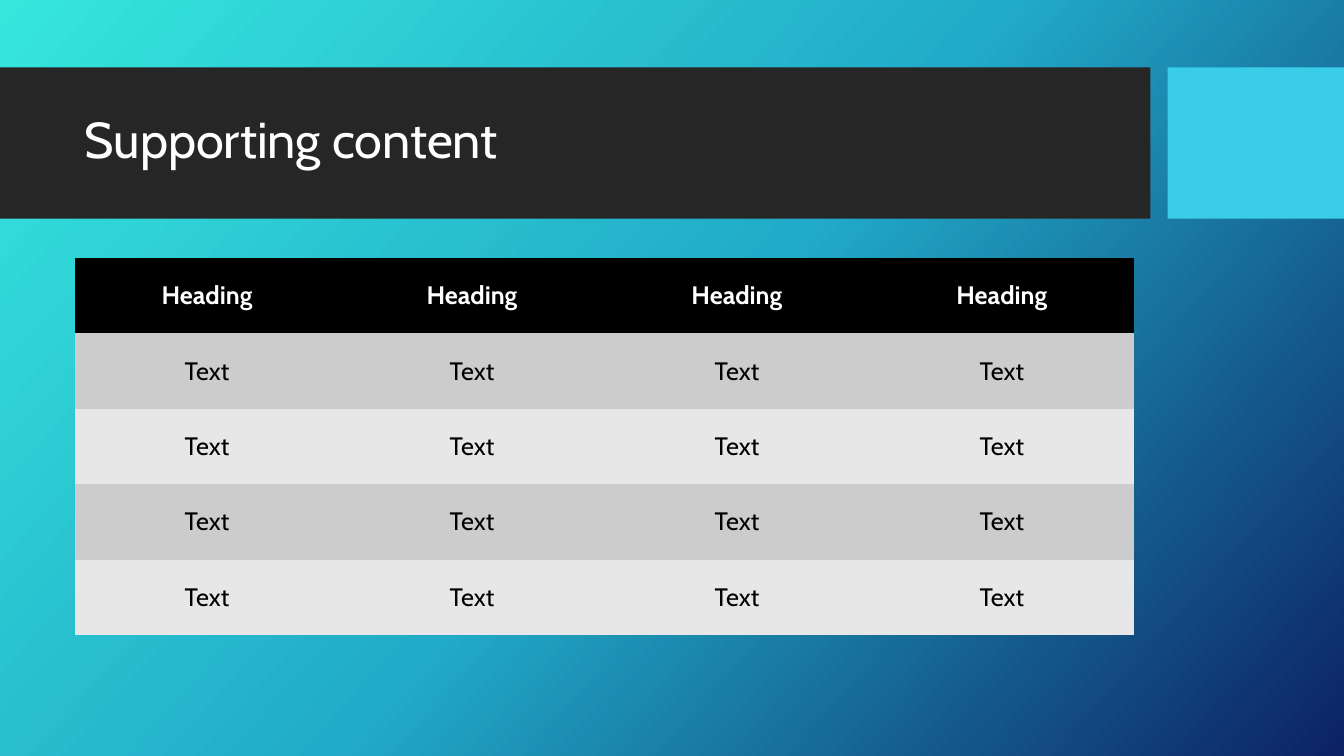
from copy import deepcopy
from dataclasses import dataclass

from pptx import Presentation
from pptx import util as u
from pptx.dml.color import RGBColor
from pptx.enum import shapes, text
from pptx.oxml.ns import qn
from pptx.slide import Slide
from pptx.text.text import TextFrame

SLIDE_WIDTH = u.Inches(13.33)
SLIDE_HEIGHT = u.Inches(7.5)
FONT = "Cabin"
NO_GRID_STYLE = "{2D5ABB26-0587-4C30-8999-92F81FD0307C}"

WHITE = RGBColor(0xFF, 0xFF, 0xFF)
BLACK = RGBColor(0x00, 0x00, 0x00)
CHARCOAL = RGBColor(0x26, 0x26, 0x26)
CYAN = RGBColor(0x39, 0xCD, 0xE7)
ROW_GREY = RGBColor(0xCC, 0xCC, 0xCC)
ROW_LIGHT = RGBColor(0xE7, 0xE7, 0xE7)
BACKDROP = (
    RGBColor(0x36, 0xE6, 0xDD),
    RGBColor(0x21, 0xAB, 0xC8),
    RGBColor(0x0C, 0x22, 0x63),
)
BACKDROP_ANGLE = 42


@dataclass(frozen=True)
class Area:
    """Place and size in percent of the slide."""

    left: float
    top: float
    width: float
    height: float

    def box(self) -> tuple[int, int, int, int]:
        return (
            round(SLIDE_WIDTH * self.left / 100),
            round(SLIDE_HEIGHT * self.top / 100),
            round(SLIDE_WIDTH * self.width / 100),
            round(SLIDE_HEIGHT * self.height / 100),
        )


@dataclass(frozen=True)
class Band:
    area: Area
    color: RGBColor


@dataclass(frozen=True)
class Row:
    label: str
    fill: RGBColor
    color: RGBColor
    bold: bool = False


BANDS = (
    Band(Area(0, 8.93, 85.6, 20), CHARCOAL),
    Band(Area(86.87, 8.93, 13.13, 20), CYAN),
)
TITLE_AREA = Area(5.55, 10.93, 78.85, 15.73)
TABLE_AREA = Area(5.55, 34.13, 78.85, 49.87)
COLUMNS = 4
ROWS = (
    Row("Heading", BLACK, WHITE, True),
    *(Row("Text", fill, BLACK) for fill in (ROW_GREY, ROW_LIGHT) * 2),
)


def write(frame: TextFrame, words: str, size: int, color: RGBColor, bold: bool = False) -> None:
    run = frame.paragraphs[0].add_run()
    run.text = words
    run.font.name = FONT
    run.font.size = u.Pt(size)
    run.font.bold = bold
    run.font.color.rgb = color


def paint_backdrop(slide: Slide) -> None:
    fill = slide.background.fill
    fill.gradient()
    fill.gradient_angle = 360 - BACKDROP_ANGLE
    stop_list = next(slide.element.iter(qn("a:gsLst")))
    stop_list.append(deepcopy(stop_list[-1]))
    for index, (stop, color) in enumerate(zip(fill.gradient_stops, BACKDROP)):
        stop.position = index / (len(BACKDROP) - 1)
        stop.color.rgb = color


def add_band(slide: Slide, band: Band) -> None:
    block = slide.shapes.add_shape(shapes.MSO_SHAPE.RECTANGLE, *band.area.box())
    block.shadow.inherit = False
    block.fill.solid()
    block.fill.fore_color.rgb = band.color
    block.line.fill.background()


def add_title(slide: Slide) -> None:
    frame = slide.shapes.add_textbox(*TITLE_AREA.box()).text_frame
    frame.word_wrap = True
    frame.vertical_anchor = text.MSO_ANCHOR.MIDDLE
    frame.paragraphs[0].line_spacing = 0.9
    write(frame, "Supporting content", 36, WHITE)


def add_content_table(slide: Slide) -> None:
    holder = slide.shapes.add_table(len(ROWS), COLUMNS, *TABLE_AREA.box())
    content = holder.table
    content.horz_banding = False
    next(holder.element.iter(qn("a:tableStyleId"))).text = NO_GRID_STYLE
    for index, row in enumerate(ROWS):
        for cell in content.rows[index].cells:
            cell.fill.solid()
            cell.fill.fore_color.rgb = row.fill
            cell.vertical_anchor = text.MSO_ANCHOR.MIDDLE
            cell.text_frame.paragraphs[0].alignment = text.PP_ALIGN.CENTER
            write(cell.text_frame, row.label, 18, row.color, row.bold)


def main() -> None:
    deck = Presentation()
    deck.slide_width = SLIDE_WIDTH
    deck.slide_height = SLIDE_HEIGHT
    slide = deck.slides.add_slide(deck.slide_layouts[6])
    paint_backdrop(slide)
    for band in BANDS:
        add_band(slide, band)
    add_title(slide)
    add_content_table(slide)
    deck.save("out.pptx")


if __name__ == "__main__":
    main()
